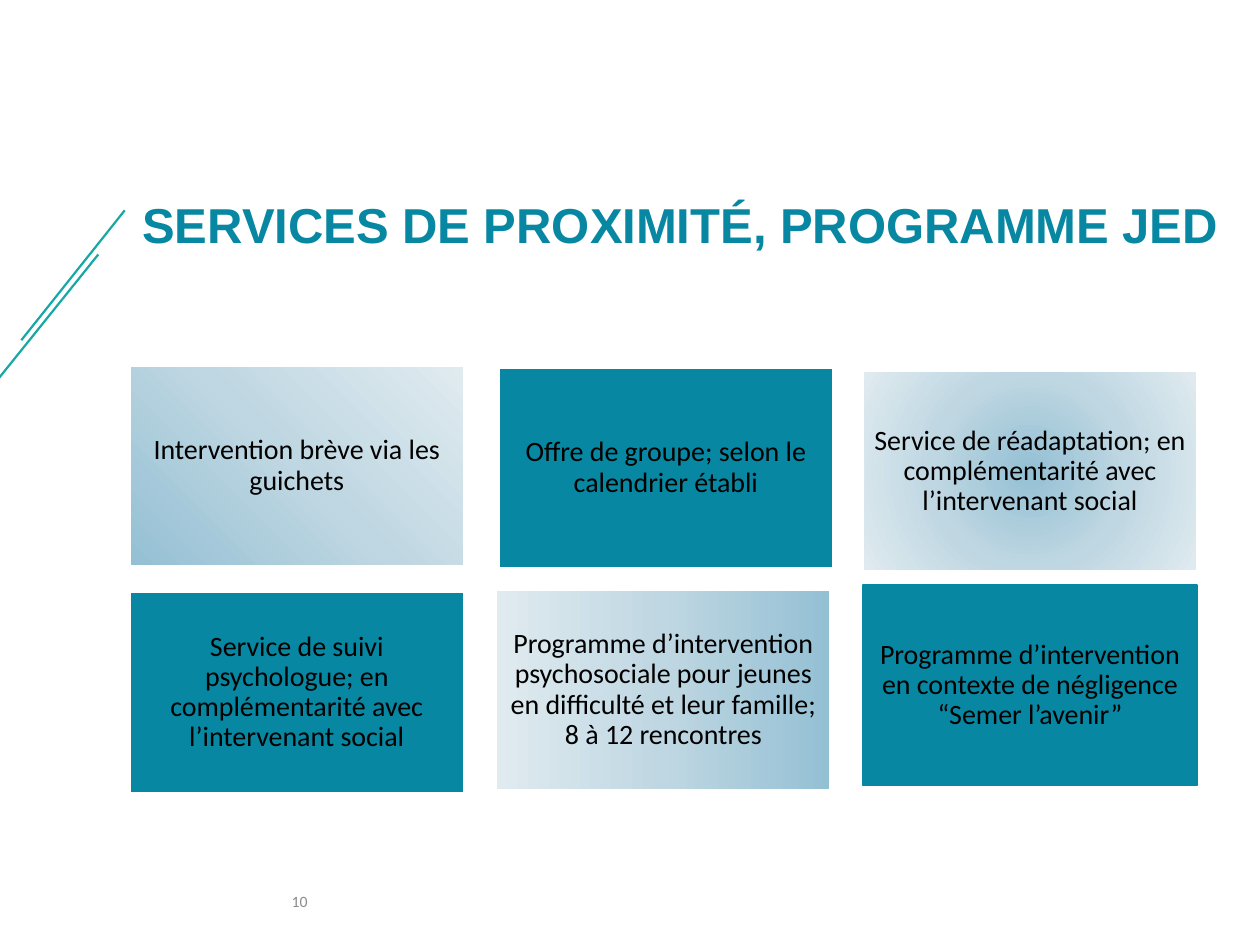
from lxml import etree
from pptx import Presentation
from pptx import util as u
from pptx.dml.color import RGBColor
from pptx.enum import shapes, text
from pptx.oxml import ns

TEAL, WHITE = "0787A1", "FFFFFF"
STOPS = [(0, "94C0D4"), (50, "BFD7E2"), (100, "E0EBF0")]


def color(value):
    return RGBColor.from_string(value)


def add_node(parent, tag, **attributes):
    values = {key: str(value) for key, value in attributes.items()}
    return etree.SubElement(parent, ns.qn("a:" + tag), values)


def apply(target, values):
    for key, value in values.items():
        setattr(target, key, value)


class Deck:
    fonts = {
        "title": ({"name": "Arial", "size": u.Pt(28), "bold": True}, TEAL),
        "service": ({"name": "Calibri", "size": u.Pt(16)}, "000000"),
        "number": ({"name": "Calibri", "size": u.Pt(9)}, "8C8C8C"),
    }

    def __init__(self, slide):
        self.slide = slide

    def typeset(self, frame, wording, style, **layout):
        apply(frame, {"word_wrap": True, "vertical_anchor": text.MSO_ANCHOR.MIDDLE})
        paragraph = frame.paragraphs[0]
        apply(paragraph, layout)
        run = paragraph.add_run()
        run.text = wording
        values, ink = self.fonts[style]
        apply(run.font, values)
        run.font.color.rgb = color(ink)

    def label(self, wording, box, style, **layout):
        area = self.slide.shapes.add_textbox(*map(u.Pt, box))
        self.typeset(area.text_frame, wording, style, **layout)

    def stroke(self, start, end):
        line = self.slide.shapes.add_connector(
            shapes.MSO_CONNECTOR.STRAIGHT, *map(u.Pt, start + end))
        line.line.color.rgb = color("17A7A5")
        line.line.width = u.Pt(1.25)
        add_node(line._element.spPr, "effectLst")

    def shade(self, tile, direction):
        tile.fill.gradient()
        gradient = tile._element.spPr.find(ns.qn("a:gradFill"))
        for child in list(gradient):
            gradient.remove(child)
        stops = add_node(gradient, "gsLst")
        for position, tint in STOPS:
            stop = add_node(stops, "gs", pos=position * 1000)
            add_node(stop, "srgbClr", val=tint)
        if direction == "linear":
            add_node(gradient, "lin", ang=180 * 60000, scaled=0)
        else:
            circle = add_node(gradient, "path", path="circle")
            insets = {side: inset * 1000 for side, inset in zip("ltrb", direction)}
            add_node(circle, "fillToRect", **insets)

    def service(self, wording, left, top, direction=None, border=WHITE):
        tile = self.slide.shapes.add_shape(
            shapes.MSO_SHAPE.RECTANGLE, *map(u.Pt, (left, top, 190.8, 114.5)))
        tile.shadow.inherit = False
        if direction:
            self.shade(tile, direction)
        else:
            tile.fill.solid()
            tile.fill.fore_color.rgb = color(TEAL)
        tile.line.color.rgb = color(border)
        tile.line.width = u.Pt(1)
        sides = ("left", "top", "right", "bottom")
        apply(tile.text_frame, {f"margin_{side}": u.Pt(5) for side in sides})
        self.typeset(tile.text_frame, wording, "service",
                     alignment=text.PP_ALIGN.CENTER, line_spacing=0.9)


SERVICES = [
    ("Programme d’intervention psychosociale pour jeunes en difficulté "
     "et leur famille; 8 à 12 rencontres", 283.7, 337, "linear"),
    ("Programme d’intervention en contexte de négligence “Semer l’avenir”",
     493.2, 334.4, None, TEAL),
    ("Service de réadaptation; en complémentarité avec l’intervenant social",
     493.2, 212, (50, 50, 50, 50)),
    ("Service de suivi psychologue; en complémentarité avec l’intervenant social",
     74.2, 338.4),
    ("Intervention brève via les guichets", 74.2, 209, (0, 100, 100, 0)),
    ("Offre de groupe; selon le calendrier établi", 285.1, 210.2),
]


def main():
    presentation = Presentation()
    apply(presentation, {"slide_width": u.Pt(720), "slide_height": u.Pt(540)})
    deck = Deck(presentation.slides.add_slide(presentation.slide_layouts[6]))
    deck.stroke((12.2, 194.4), (71.3, 120.2))
    deck.stroke((-2.9, 218.9), (56.2, 145.4))
    deck.label("10", (15.1, 500.4, 167.8, 28.8), "number",
               alignment=text.PP_ALIGN.RIGHT)
    deck.label("SERVICES DE PROXIMITÉ, PROGRAMME JED", (74.2, 85, 634.3, 90),
               "title", line_spacing=0.9)
    for service in SERVICES:
        deck.service(*service)
    presentation.save("out.pptx")


if __name__ == "__main__":
    main()
